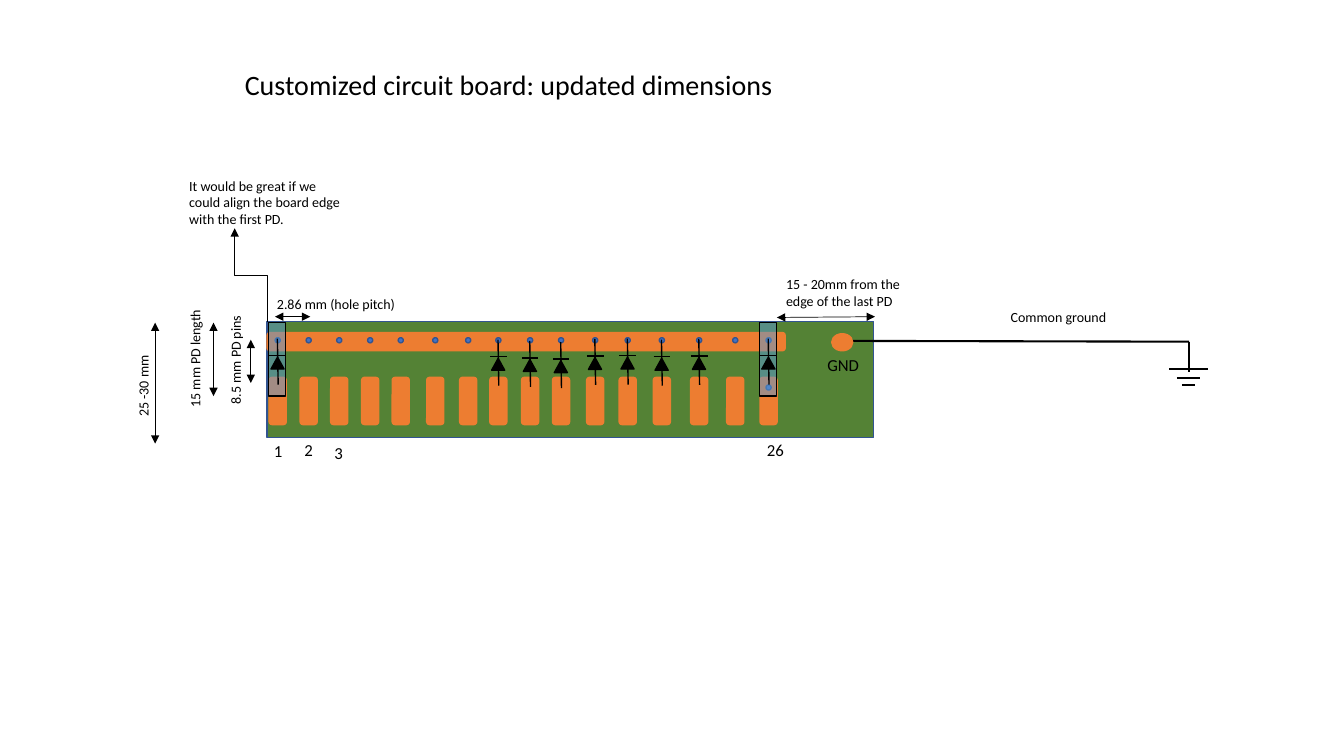
from lxml import etree
from pptx import Presentation
from pptx.dml.color import RGBColor
from pptx.enum import shapes, text
from pptx.oxml import ns
from pptx.util import Cm, Pt

BLACK = RGBColor(0x00, 0x00, 0x00)
BOARD_GREEN = RGBColor(0x54, 0x82, 0x35)
COPPER = RGBColor(0xED, 0x7D, 0x31)
HOLE_BLUE = RGBColor(0x44, 0x72, 0xC4)
EDGE_BLUE = RGBColor(0x32, 0x54, 0x91)
DETECTOR_BLUE = RGBColor(0x5B, 0x9B, 0xD5)
FONT = "Calibri"

BOARD = (6.73, 8.1, 15.29, 2.92)
RAIL = (6.73, 8.38, 13.06, 0.46)
GROUND_PAD = (20.96, 8.41, 0.53, 0.43)
PAD_CENTRES = [7.0, 7.78, 8.55, 9.33, 10.1, 10.97, 11.8, 12.56,
               13.36, 14.14, 15.0, 15.82, 16.68, 17.62, 18.53, 19.37]
PAD_TOP, PAD_WIDTH, PAD_HEIGHT = 9.51, 0.43, 1.19
HOLE_SIZE, HOLE_TOP, LAST_LOWER_HOLE_TOP = 0.13, 8.51, 9.7
DETECTOR_TOP, DETECTOR_WIDTH, DETECTOR_HEIGHT = 8.13, 0.43, 1.85
DIODE_TOPS = {7: 8.56, 8: 8.59, 9: 8.62, 10: 8.54, 11: 8.53, 12: 8.56, 13: 8.54}
DETECTOR_DIODE_TOPS = {0: 8.53, 15: 8.53}

DIMENSION_ARROWS = [
    (6.32, 8.56, 6.32, 9.65),
    (6.93, 7.98, 7.82, 7.98),
    (3.91, 8.13, 3.91, 11.18),
    (5.38, 8.13, 5.38, 9.98),
    (22.05, 7.98, 19.58, 8.0),
]
GROUND_WIRE = [(21.39, 8.59, 29.97, 8.61), (29.97, 8.61, 29.97, 9.37)]
GROUND_CENTRE = 29.95
GROUND_BARS = [(0.97, 9.3), (0.58, 9.53), (0.33, 9.7)]

TITLE = ("Customized circuit board: updated dimensions", 5.92, 1.57, 17.78, 1.11)
NOTES = [
    ("2.86 mm (hole pitch)", 6.73, 7.32, 3.63, 0.68),
    ("Common ground", 25.22, 7.65, 3.81, 0.68),
    ("It would be great if we could align the board edge with the first PD.",
     4.52, 4.34, 4.39, 1.54),
    ("15 - 20mm from the edge of the last PD", 19.56, 6.81, 3.94, 1.11),
]
VERTICAL_NOTES = [
    ("8.5 mm PD pins", 3.99, 8.15, 3.89, 0.68),
    ("25 -30 mm", 2.39, 9.19, 2.44, 0.68),
    ("15 mm PD length", 2.97, 8.23, 3.89, 0.68),
]
LABELS = [
    ("GND", 20.6, 8.81, 1.32, 0.77),
    ("1", 6.65, 10.97, 0.74, 0.77),
    ("2", 7.42, 10.95, 0.74, 0.77),
    ("3", 8.18, 11.02, 0.74, 0.77),
    ("26", 19.08, 10.95, 0.94, 0.77),
]


def add_part(parent, kind, place, fill, line):
    part = parent.shapes.add_shape(kind, *map(Cm, place))
    part.shadow.inherit = False
    part.fill.solid()
    part.fill.fore_color.rgb = fill
    part.line.color.rgb = line
    part.line.width = Pt(1)
    return part


def add_line(parent, ends, width, arrows=(), kind=shapes.MSO_CONNECTOR.STRAIGHT):
    line = parent.shapes.add_connector(kind, *map(Cm, ends))
    line.line.color.rgb = BLACK
    line.line.width = Pt(width)
    properties = line._element.spPr
    outline = properties.find(ns.qn("a:ln"))
    for end in arrows:
        etree.SubElement(outline, ns.qn("a:" + end)).set("type", "triangle")
    etree.SubElement(properties, ns.qn("a:effectLst"))
    return line


def add_text(page, words, left, top, width, height, size, wrap=True, rotation=0):
    box = page.shapes.add_textbox(*map(Cm, (left, top, width, height)))
    box.rotation = rotation
    frame = box.text_frame
    frame.word_wrap = wrap
    frame.auto_size = text.MSO_AUTO_SIZE.SHAPE_TO_FIT_TEXT
    para = frame.paragraphs[0]
    para.text = words
    para.font.name = FONT
    para.font.size = Pt(size)
    para.font.color.rgb = BLACK


def add_hole(page, centre, top):
    place = (centre - HOLE_SIZE / 2, top, HOLE_SIZE, HOLE_SIZE)
    add_part(page, shapes.MSO_SHAPE.OVAL, place, HOLE_BLUE, EDGE_BLUE)


def add_diode(page, centre, top):
    diode = page.shapes.add_group_shape()
    add_part(diode, shapes.MSO_SHAPE.ISOSCELES_TRIANGLE,
             (centre - 0.17, top + 0.47, 0.33, 0.3), BLACK, BLACK)
    add_line(diode, (centre - 0.21, top + 0.43, centre + 0.21, top + 0.43), 1)
    add_line(diode, (centre - 0.01, top, centre + 0.01, top + 1.16), 1)


def add_detector(page, centre):
    place = (centre - DETECTOR_WIDTH / 2 - 0.02, DETECTOR_TOP,
             DETECTOR_WIDTH, DETECTOR_HEIGHT)
    body = add_part(page, shapes.MSO_SHAPE.RECTANGLE, place, DETECTOR_BLUE, BLACK)
    colour = body._element.spPr.find(ns.qn("a:solidFill"))[0]
    etree.SubElement(colour, ns.qn("a:alpha")).set("val", "51000")


def main():
    deck = Presentation()
    deck.slide_width, deck.slide_height = Cm(33.87), Cm(19.05)
    page = deck.slides.add_slide(deck.slide_layouts[6])

    add_part(page, shapes.MSO_SHAPE.RECTANGLE, BOARD, BOARD_GREEN, EDGE_BLUE)
    add_part(page, shapes.MSO_SHAPE.ROUNDED_RECTANGLE, RAIL, COPPER, COPPER)
    pads = page.shapes.add_group_shape()
    for centre in PAD_CENTRES:
        place = (centre - PAD_WIDTH / 2, PAD_TOP, PAD_WIDTH, PAD_HEIGHT)
        add_part(pads, shapes.MSO_SHAPE.ROUNDED_RECTANGLE, place, COPPER, COPPER)
        add_hole(page, centre, HOLE_TOP)
    add_hole(page, PAD_CENTRES[-1], LAST_LOWER_HOLE_TOP)

    for index, top in DIODE_TOPS.items():
        add_diode(page, PAD_CENTRES[index], top)
    for index, top in DETECTOR_DIODE_TOPS.items():
        add_detector(page, PAD_CENTRES[index])
        add_diode(page, PAD_CENTRES[index], top)

    for ends in GROUND_WIRE:
        add_line(page, ends, 1.5)
    for width, y in GROUND_BARS:
        add_line(page, (GROUND_CENTRE - width / 2, y, GROUND_CENTRE + width / 2, y), 1.5)
    add_part(page, shapes.MSO_SHAPE.OVAL, GROUND_PAD, COPPER, COPPER)

    for ends in DIMENSION_ARROWS:
        add_line(page, ends, 0.5, ("headEnd", "tailEnd"))
    edge_pointer = add_line(page, (5.14, 7.35, 7.51, 6.53), 0.5, ("tailEnd",),
                            shapes.MSO_CONNECTOR.ELBOW)
    edge_pointer._element.spPr.find(ns.qn("a:xfrm")).set("rot", "16200000")

    add_text(page, *TITLE, size=20)
    for note in NOTES:
        add_text(page, *note, size=10)
    for note in VERTICAL_NOTES:
        add_text(page, *note, size=10, rotation=270)
    for label in LABELS:
        add_text(page, *label, size=12, wrap=False)

    deck.save("out.pptx")


if __name__ == "__main__":
    main()
